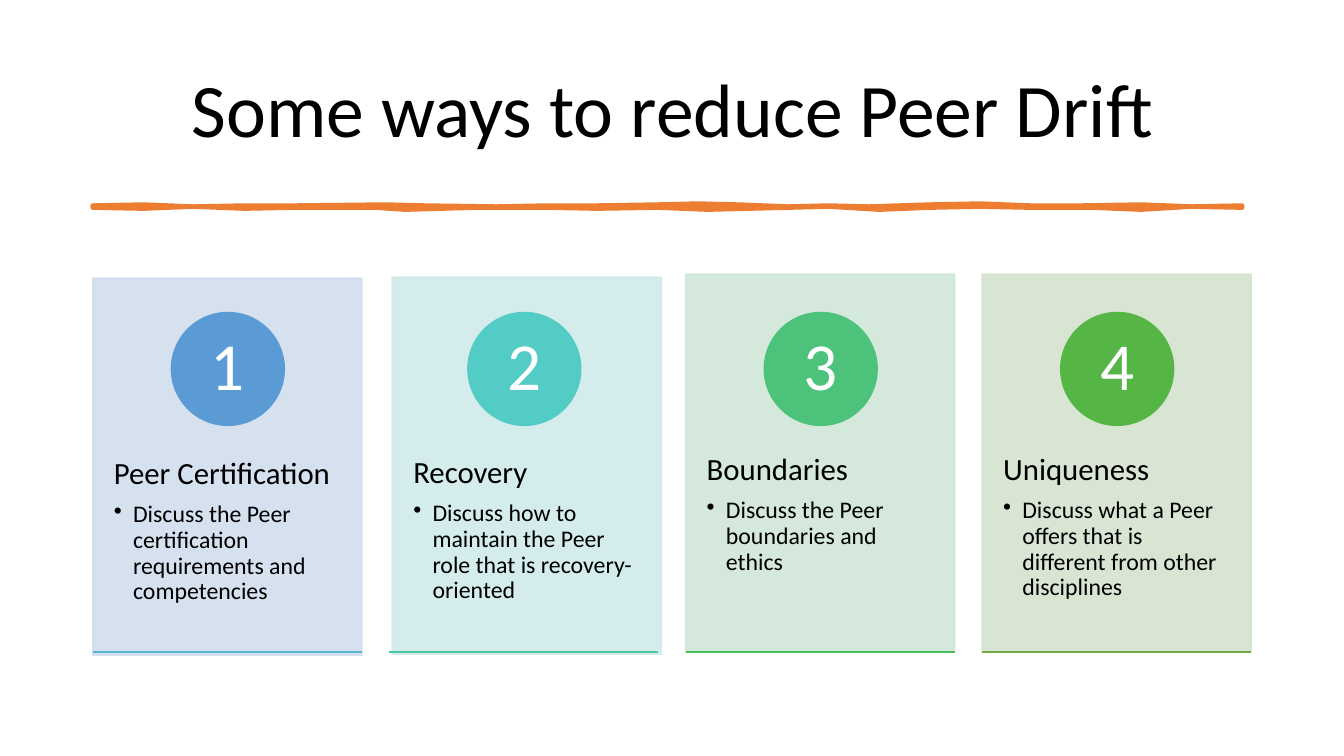
from lxml.etree import SubElement
from pptx import Presentation
from pptx.dml.color import RGBColor
from pptx.enum.shapes import MSO_CONNECTOR, MSO_SHAPE
from pptx.enum.text import MSO_ANCHOR as Anchor, MSO_AUTO_SIZE as AutoSize, PP_ALIGN as Align
from pptx.oxml.ns import qn
from pptx.util import Inches, Pt

BLACK = RGBColor(0x00, 0x00, 0x00)
WHITE = RGBColor(0xFF, 0xFF, 0xFF)
ORANGE = RGBColor(0xED, 0x7D, 0x31)
PANEL_COLORS = [RGBColor(0xD2, 0xDE, 0xEF), RGBColor(0xD0, 0xEC, 0xEA),
                RGBColor(0xD0, 0xE7, 0xD8), RGBColor(0xD5, 0xE3, 0xCF)]
CIRCLE_COLORS = [RGBColor(0x5B, 0x9B, 0xD5), RGBColor(0x53, 0xCC, 0xC5),
                 RGBColor(0x4C, 0xC2, 0x7B), RGBColor(0x55, 0xB6, 0x46)]
RULE_COLORS = [RGBColor(0x57, 0xB7, 0xD1), RGBColor(0x4F, 0xC7, 0xA0),
               RGBColor(0x48, 0xBD, 0x58), RGBColor(0x70, 0xAD, 0x47)]

WAYS = [
    ("Peer Certification", "Discuss the Peer certification requirements and competencies"),
    ("Recovery", "Discuss how to maintain the Peer role that is recovery-oriented"),
    ("Boundaries", "Discuss the Peer boundaries and ethics"),
    ("Uniqueness", "Discuss what a Peer offers that is different from other disciplines"),
]
PANEL_OFFSETS = [(0, 0.04), (0.03, 0.03), (0, 0), (0, 0)]
CARD_LEFT, CARD_TOP, CARD_PITCH = 0.92, 2.72, 2.94
CARD_WIDTH, CARD_HEIGHT = 2.67, 3.74

STROKE_TOP = [(0, 0.01), (0.5, 0), (1, 0.02), (1.5, 0.01), (2, 0.01), (2.9, 0),
              (3.3, 0.01), (4, 0.02), (4.5, 0.01), (5, 0.01), (5.6, 0), (6, -0.01),
              (6.4, 0), (6.9, 0.02), (7.3, 0.01), (7.7, 0.02), (8.3, 0), (8.8, -0.01),
              (9.3, 0.01), (9.8, 0.01), (10.4, 0), (10.9, 0.02), (11.4, 0.01)]
STROKE_BOTTOM = [(11.4, 0.03), (10.9, 0.02), (10.4, 0.05), (9.9, 0.03), (9.3, 0.03),
                 (8.8, 0.02), (8.3, 0.03), (7.8, 0.05), (7.3, 0.02), (6.9, 0.03),
                 (6.1, 0.05), (5.6, 0.03), (5, 0.04), (4.5, 0.03), (3.8, 0.03),
                 (3.1, 0.05), (2.8, 0.03), (2, 0.03), (1.5, 0.04), (1, 0.02),
                 (0.5, 0.04), (0, 0.03)]


def write(paragraph, text, size, color=BLACK, align=Align.LEFT, after=0, bullet=False):
    """Put formatted text in a paragraph, optionally with a hanging bullet."""
    paragraph.alignment = align
    paragraph.line_spacing = 0.9
    paragraph.space_after = Pt(after)
    run = paragraph.add_run()
    run.text = text
    run.font.name = "Calibri"
    run.font.size = Pt(size)
    run.font.color.rgb = color
    if bullet:
        properties = paragraph._p.get_or_add_pPr()
        properties.set("marL", str(Inches(0.19)))
        properties.set("indent", str(-Inches(0.19)))
        SubElement(properties, qn("a:buChar")).set("char", "•")


def paint(shape, color, line_width=1, alpha=None):
    """Give a shape one colour for fill and line, without a shadow."""
    shape.shadow.inherit = False
    shape.fill.solid()
    shape.fill.fore_color.rgb = color
    shape.line.color.rgb = color
    shape.line.width = Pt(line_width)
    if alpha:
        for tint in shape._element.spPr.iter(qn("a:srgbClr")):
            SubElement(tint, qn("a:alpha")).set("val", str(alpha * 1000))


def set_frame(frame, anchor, side=0.1, end=0.05):
    """Wrap a text frame and set its anchor and margins."""
    frame.word_wrap = True
    frame.auto_size = AutoSize.NONE
    frame.vertical_anchor = anchor
    frame.margin_left = frame.margin_right = Inches(side)
    frame.margin_top = frame.margin_bottom = Inches(end)


def add_heading(slide, left, top, width, height):
    """Place the slide title in its box."""
    heading = slide.shapes.title
    heading.left, heading.top = Inches(left), Inches(top)
    heading.width, heading.height = Inches(width), Inches(height)
    set_frame(heading.text_frame, Anchor.MIDDLE)
    write(heading.text_frame.paragraphs[0], "Some ways to reduce Peer Drift", 54, align=Align.CENTER)


def add_brush_stroke(slide, left, top):
    """Draw the uneven brush stroke under the title."""
    outline = [(Inches(left + x), Inches(top + y)) for x, y in STROKE_TOP + STROKE_BOTTOM]
    builder = slide.shapes.build_freeform(*outline[0])
    builder.add_line_segments(outline[1:], close=True)
    stroke = builder.convert_to_shape()
    paint(stroke, ORANGE, 3.25)
    SubElement(stroke.line._get_or_add_ln(), qn("a:round"))


def add_card(slide, index, left, top, width, height):
    """Draw one numbered card with its heading, bullet and base rule."""
    shift, drop = PANEL_OFFSETS[index]
    panel_left, panel_top = left + shift, top + drop
    panel = slide.shapes.add_shape(MSO_SHAPE.RECTANGLE, Inches(panel_left), Inches(panel_top),
                                   Inches(width), Inches(height))
    paint(panel, PANEL_COLORS[index], alpha=90)

    advice = slide.shapes.add_textbox(Inches(panel_left), Inches(panel_top + 1.42),
                                      Inches(width), Inches(2.25)).text_frame
    set_frame(advice, Anchor.TOP, 0.21, 0.36)
    topic, detail = WAYS[index]
    write(advice.paragraphs[0], topic, 22, after=8)
    write(advice.add_paragraph(), detail, 17, after=2.5, bullet=True)

    circle = slide.shapes.add_shape(MSO_SHAPE.OVAL, Inches(left + 0.78), Inches(top + 0.38),
                                    Inches(1.12), Inches(1.12))
    paint(circle, CIRCLE_COLORS[index])
    set_frame(circle.text_frame, Anchor.MIDDLE, 0.09, 0.01)
    write(circle.text_frame.paragraphs[0], str(index + 1), 48, WHITE, Align.CENTER)

    base = Inches(top + height + 0.01)
    rule = slide.shapes.add_connector(MSO_CONNECTOR.STRAIGHT, Inches(left), base,
                                      Inches(left + width), base)
    rule.line.color.rgb = RULE_COLORS[index]
    rule.line.width = Pt(1)
    SubElement(rule._element.spPr, qn("a:effectLst"))


def main():
    """Build the slide and save it."""
    deck = Presentation()
    deck.slide_width, deck.slide_height = Inches(13.33), Inches(7.5)
    slide = deck.slides.add_slide(deck.slide_layouts[5])
    add_heading(slide, 0.92, 0.4, 11.5, 1.45)
    add_brush_stroke(slide, 0.92, 2.03)
    for index in range(len(WAYS)):
        add_card(slide, index, CARD_LEFT + index * CARD_PITCH, CARD_TOP, CARD_WIDTH, CARD_HEIGHT)
    deck.save("out.pptx")


if __name__ == "__main__":
    main()
